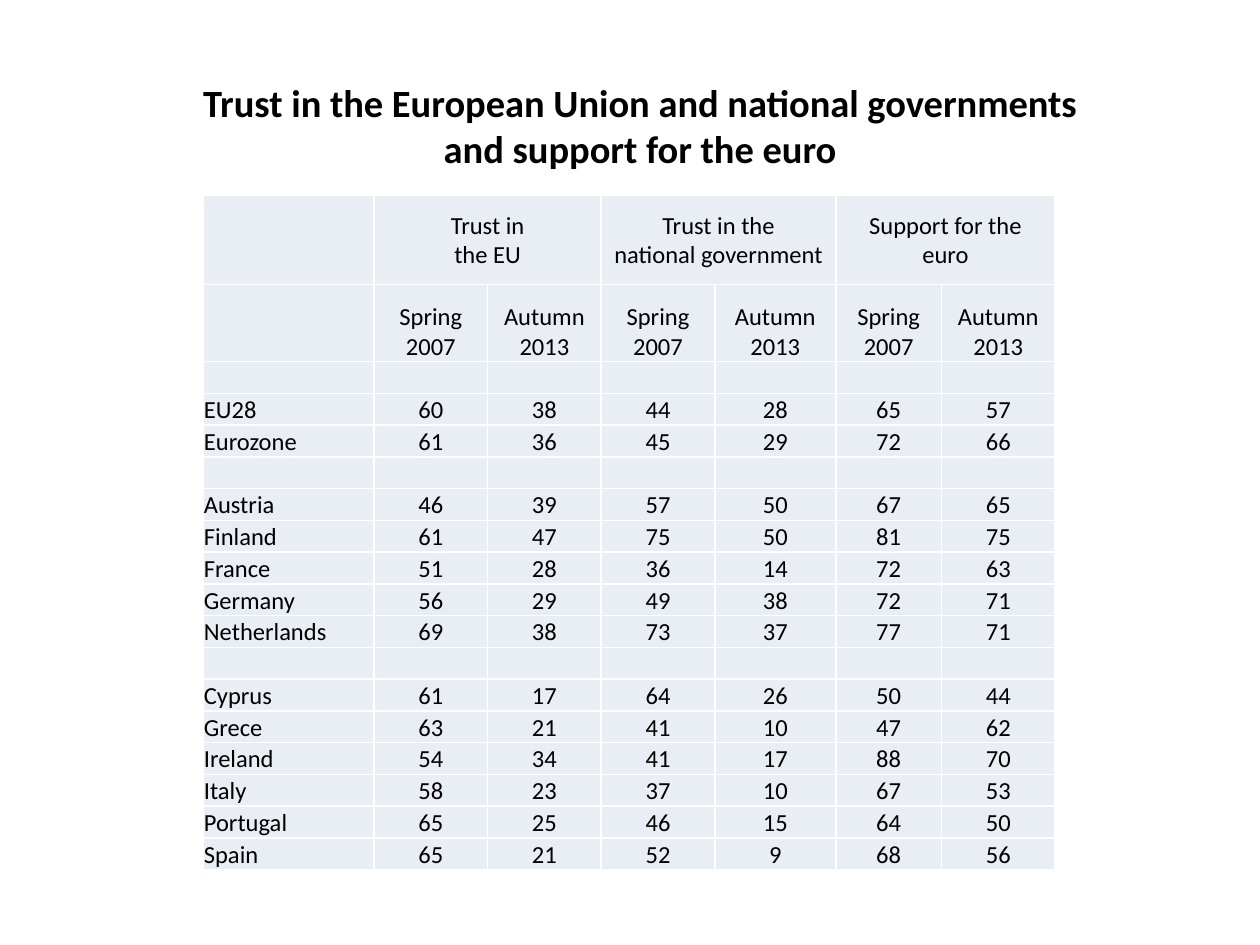
from pptx import Presentation
from pptx.dml.color import RGBColor
from pptx.enum.text import MSO_ANCHOR as ANCHOR, PP_ALIGN as ALIGN
from pptx.util import Cm, Pt

COLORS = {"text": "000000", "cell": "E9EDF4"}
FONT = "Calibri"
COL_WIDTHS = [3.45, 2.29, 2.29, 2.29, 2.44, 2.13, 2.29]
HEADER_HEIGHTS = [1.8, 1.55]
ROW_HEIGHT = 0.64

GROUPS = ["Trust in\nthe EU", "Trust in the\nnational government", "Support for the\neuro"]
BLANK = [""] * 7
ROWS = [
    ["", GROUPS[0], "", GROUPS[1], "", GROUPS[2], ""],
    [""] + ["Spring 2007", "Autumn 2013"] * 3,
    BLANK,
    ["EU28", 60, 38, 44, 28, 65, 57],
    ["Eurozone", 61, 36, 45, 29, 72, 66],
    BLANK,
    ["Austria", 46, 39, 57, 50, 67, 65],
    ["Finland", 61, 47, 75, 50, 81, 75],
    ["France", 51, 28, 36, 14, 72, 63],
    ["Germany", 56, 29, 49, 38, 72, 71],
    ["Netherlands", 69, 38, 73, 37, 77, 71],
    BLANK,
    ["Cyprus", 61, 17, 64, 26, 50, 44],
    ["Grece", 63, 21, 41, 10, 47, 62],
    ["Ireland", 54, 34, 41, 17, 88, 70],
    ["Italy", 58, 23, 37, 10, 67, 53],
    ["Portugal", 65, 25, 46, 15, 64, 50],
    ["Spain", 65, 21, 52, 9, 68, 56],
]


def style(p, size, align, bold=False):
    p.alignment = align
    p.font.name = FONT
    p.font.size = Pt(size)
    p.font.bold = bold
    p.font.color.rgb = RGBColor.from_string(COLORS["text"])


prs = Presentation()
prs.slide_width, prs.slide_height = Cm(25.4), Cm(19.05)
s = prs.slides.add_slide(prs.slide_layouts[6])

title = s.shapes.add_textbox(Cm(2.11), Cm(1.32), Cm(21.59), Cm(2.39))
tf = title.text_frame
tf.word_wrap = True
tf.vertical_anchor = ANCHOR.MIDDLE
p = tf.paragraphs[0]
p.text = "Trust in the European Union and national governments\vand support for the euro"
style(p, 22, ALIGN.CENTER, bold=True)

heights = HEADER_HEIGHTS + [ROW_HEIGHT] * (len(ROWS) - len(HEADER_HEIGHTS))
table = s.shapes.add_table(
    len(ROWS), len(COL_WIDTHS), Cm(4.09), Cm(3.94), Cm(sum(COL_WIDTHS)), Cm(sum(heights))
).table
table.first_row = False
table.horz_banding = False
for column, width in zip(table.columns, COL_WIDTHS):
    column.width = Cm(width)
for row, height in zip(table.rows, heights):
    row.height = Cm(height)
for c in (1, 3, 5):
    table.cell(0, c).merge(table.cell(0, c + 1))

for r, values in enumerate(ROWS):
    for c, value in enumerate(values):
        cell = table.cell(r, c)
        cell.fill.solid()
        cell.fill.fore_color.rgb = RGBColor.from_string(COLORS["cell"])
        cell.margin_left = cell.margin_right = cell.margin_top = Cm(0.02)
        cell.margin_bottom = 0
        cell.vertical_anchor = ANCHOR.MIDDLE if r == 0 else ANCHOR.BOTTOM
        cell.text = str(value)
        for p in cell.text_frame.paragraphs:
            style(p, 14, ALIGN.CENTER if c else ALIGN.LEFT)
            if not p.text:
                p._p.get_or_add_endParaRPr().set("sz", "1400")

prs.save("out.pptx")
